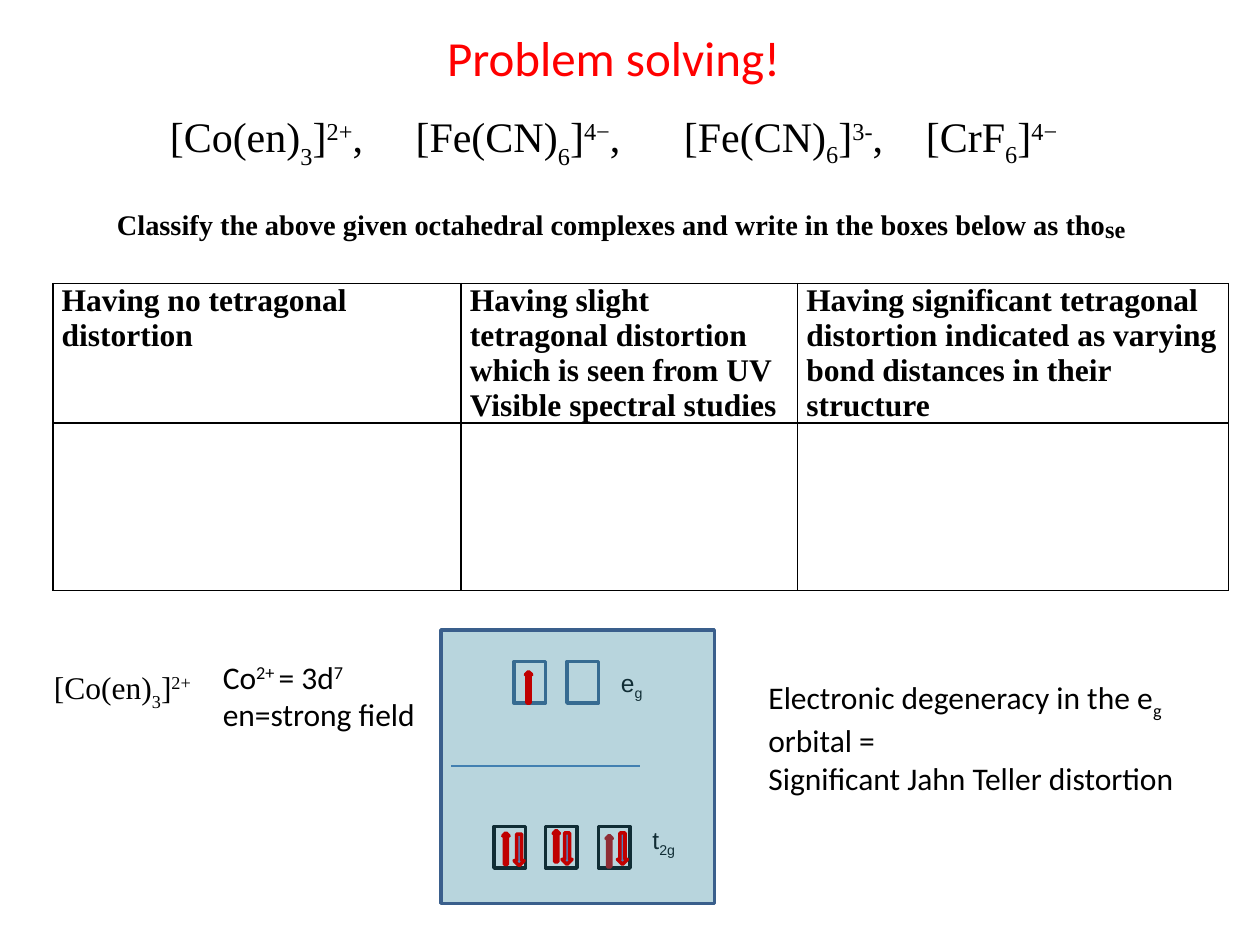
from lxml.etree import SubElement
from pptx import Presentation
from pptx.dml.color import RGBColor
from pptx.enum.shapes import MSO_CONNECTOR, MSO_SHAPE
from pptx.enum.text import MSO_AUTO_SIZE, PP_ALIGN
from pptx.oxml.ns import qn
from pptx.util import Inches, Pt

THEME = dict(
    serif="Times New Roman", sans="Calibri", label="Arial",
    ink="000000", title="FF0000", border="3A5F8C", divider="4B7EBC",
    panel="31859C", arrow="4F81BD", spin="C00000",
    title_size=28, formula_size=24, body_size=18, label_size=14,
)
T = THEME
# Runs are split at "|"; a leading mark sets the baseline shift in percent
BASELINE = {"^": 30, "_": -25, "~": -30}

TITLE = "Problem solving!"
COMPLEXES = ["[Co(en)|~3|]|^2+|,", "[Fe(CN)|~6|]|^4−|,",
             "[Fe(CN)|_6|]|^3-|,", "[CrF|_6|]|^4−"]
COMPLEX_TABS = [1.95, 4.08, 6]
TASK = ("^Classify the above given octahedral complexes and write in "
        "the boxes below as tho|^se")
HEADERS = [
    "Having no tetragonal distortion",
    "Having slight tetragonal distortion which is seen from UV Visible spectral studies",
    "Having significant tetragonal distortion indicated as varying bond distances "
    "in their structure",
]
COL_WIDTHS, ROW_HEIGHTS = [3.24, 2.67, 3.42], [1, 1.33]
ION = ["Co|^2+ |= 3d|^7", "en=strong field"]
RESULT = ["Electronic degeneracy in the e|_g| orbital =",
          "Significant Jahn Teller distortion"]

# Orbital boxes: (left edges, top, line colour)
ORBITALS = [((4.08, 4.5), 5.25, T["border"]), ((3.92, 4.33, 4.75), 6.56, T["ink"])]
ORBITAL_LABELS = [("e|_g", 4.83, 5.25), ("t|_2g", 5.08, 6.5)]
# Electrons: (left, top)
SPIN_UP_BEHIND = (4.81, 6.63)
SPINS_UP = [(4.39, 6.59), (3.99, 6.61), (4.17, 5.33)]
SPINS_DOWN = [(4.08, 6.62), (4.46, 6.61), (4.9, 6.61)]

prs = Presentation()
prs.slide_width, prs.slide_height = Inches(10), Inches(7.5)
s = prs.slides.add_slide(prs.slide_layouts[6])


def rgb(name):
    return RGBColor.from_string(name)


def inches(*values):
    return [Inches(v) for v in values]


def style(r, font, size, color=T["ink"], bold=None):
    r.font.name, r.font.size, r.font.bold = font, Pt(size), bold
    r.font.color.rgb = rgb(color)


def add_text(box, lines, font, size, color=T["ink"], bold=None, wrap=True, align=None):
    sp = s.shapes.add_textbox(*inches(*box))
    tf = sp.text_frame
    tf.word_wrap, tf.auto_size = wrap, MSO_AUTO_SIZE.SHAPE_TO_FIT_TEXT
    for i, line in enumerate(lines):
        p = tf.add_paragraph() if i else tf.paragraphs[0]
        p.alignment = align
        for part in line.split("|"):
            r = p.add_run()
            r.text = part[1:] if part[0] in BASELINE else part
            style(r, font, size, color, bold)
            if part[0] in BASELINE:
                r.font._element.set("baseline", str(BASELINE[part[0]] * 1000))
    return tf


def add_box(kind, box, line, fill=None, alpha=None):
    sp = s.shapes.add_shape(kind, *inches(*box))
    sp.shadow.inherit = False
    sp.line.color.rgb, sp.line.width = rgb(line), Pt(2)
    if fill:
        sp.fill.solid()
        sp.fill.fore_color.rgb = rgb(fill)
    else:
        sp.fill.background()
    if alpha:
        color = sp._element.spPr.find(qn("a:solidFill"))[0]
        SubElement(color, qn("a:alpha"), val=str(alpha * 1000))
    return sp


def add_spin(left, top, down=False):
    width = 0.08 if down else 0.05
    sp = add_box(MSO_SHAPE.UP_ARROW, (left, top, width, 0.25), T["spin"], T["arrow"])
    sp.rotation = 180 if down else 0


def set_borders(cell):
    tc_pr = cell._tc.get_or_add_tcPr()
    for i, side in enumerate(("lnL", "lnR", "lnT", "lnB")):
        ln = tc_pr.makeelement(qn("a:" + side), {"w": str(Pt(1))})
        SubElement(SubElement(ln, qn("a:solidFill")), qn("a:srgbClr"), val=T["ink"])
        tc_pr.insert(i, ln)


# Classification table
table = s.shapes.add_table(2, 3, *inches(0.42, 2.25, sum(COL_WIDTHS), sum(ROW_HEIGHTS))).table
table.first_row = table.horz_banding = False
for col, width in zip(table.columns, COL_WIDTHS):
    col.width = Inches(width)
for row, height in zip(table.rows, ROW_HEIGHTS):
    row.height = Inches(height)
for cell in table.iter_cells():
    cell.fill.background()
    cell.margin_left = cell.margin_right = Inches(0.07)
    cell.margin_top = cell.margin_bottom = 0
    set_borders(cell)
for cell, header in zip(table.rows[0].cells, HEADERS):
    cell.text_frame.text = header
    style(cell.text_frame.paragraphs[0].runs[0], T["serif"], T["body_size"], bold=True)

# Task, complexes and title
tf = add_text((0.83, 1.42, 8.25, 0.91), [TASK], T["serif"], T["title_size"], bold=True)
tf.margin_top = Inches(0.18)
tf.paragraphs[0].runs[-1].font.size = Pt(T["formula_size"])
tf = add_text((1.25, 0.83, 8, 0.5), ["|\t".join(COMPLEXES)], T["serif"], T["formula_size"])
tabs = SubElement(tf.paragraphs[0]._p.get_or_add_pPr(), qn("a:tabLst"))
for stop in COMPLEX_TABS:
    SubElement(tabs, qn("a:tab"), pos=str(Inches(stop)), algn="l")
add_text((2.83, 0.17, 4.08, 0.57), [TITLE], T["sans"], T["title_size"], T["title"],
         align=PP_ALIGN.CENTER)
add_text((1.67, 5.17, 2.17, 0.71), ION, T["sans"], T["body_size"])

# Orbital diagram
for lefts, top, color in ORBITALS:
    for left in lefts:
        add_box(MSO_SHAPE.FLOWCHART_PROCESS, (left, top, 0.25, 0.33), color)
for label, left, top in ORBITAL_LABELS:
    add_text((left, top, 0.42, 0.34), [label], T["label"], T["label_size"])
divider = s.shapes.add_connector(MSO_CONNECTOR.STRAIGHT, *inches(3.58, 6.08, 5.08, 6.08))
divider.line.color.rgb, divider.line.width = rgb(T["divider"]), Pt(0.75)
SubElement(divider._element.spPr, qn("a:effectLst"))

# Translucent panel between the electrons
add_spin(*SPIN_UP_BEHIND)
add_box(MSO_SHAPE.RECTANGLE, (3.5, 5, 2.17, 2.17), T["border"], T["panel"], alpha=34)
for spin in SPINS_UP:
    add_spin(*spin)
for spin in SPINS_DOWN:
    add_spin(*spin, down=True)

# Conclusion and the complex it is about
add_text((6, 5.33, 3.58, 1.01), RESULT, T["sans"], T["body_size"])
add_text((0.33, 5.25, 1.33, 0.4), [COMPLEXES[0].removesuffix("|,")], T["serif"],
         T["body_size"], wrap=False)

prs.save("out.pptx")
